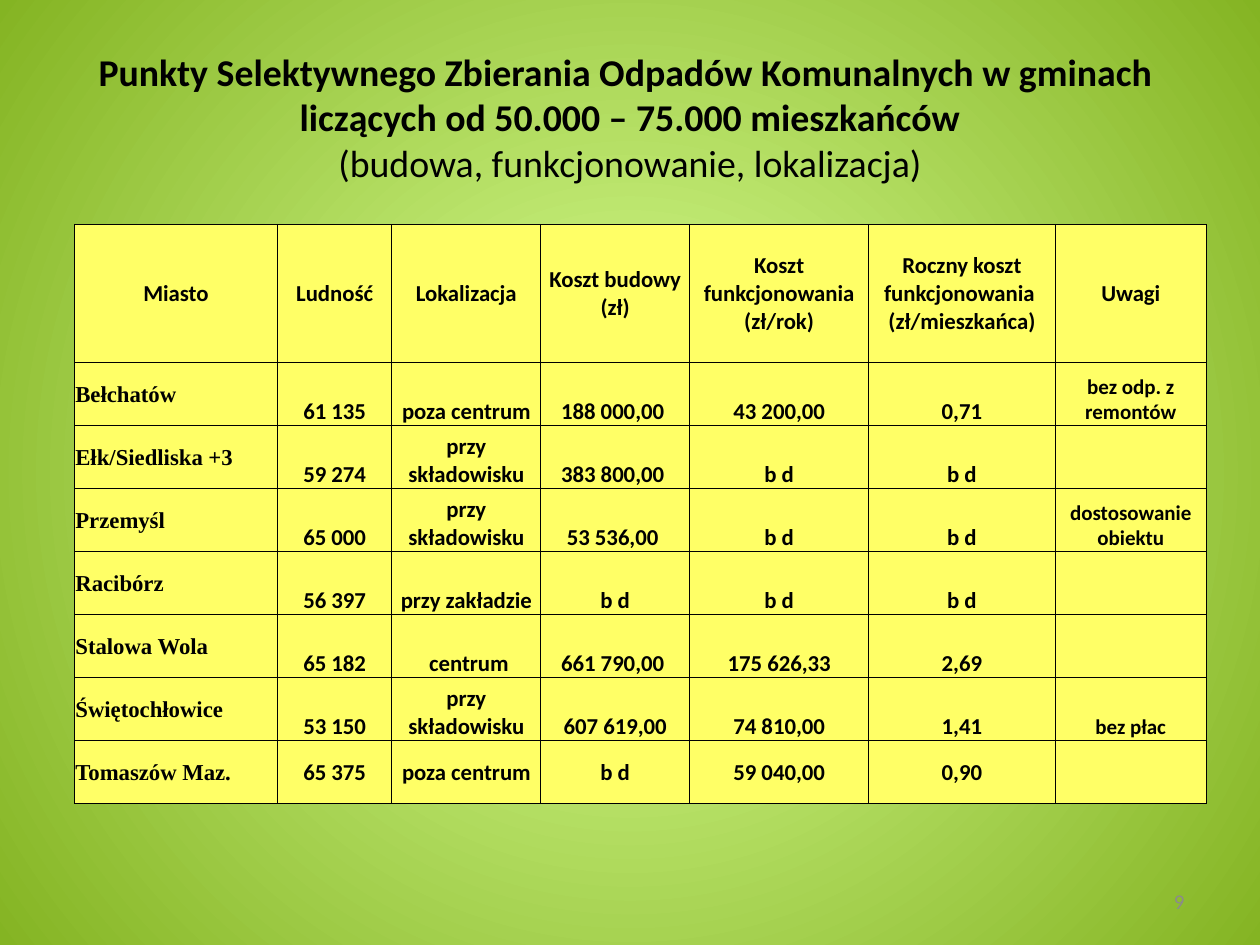
from pptx import Presentation
from pptx import util as u
from pptx.dml.color import RGBColor
from pptx.enum import text as t
from pptx.oxml import ns, parse_xml

HUES = {"ink": "000000", "cell": "FFFF66", "glow": "D9FF95", "edge": "84B423", "page": "8B8B8B"}
MID, LOW = t.MSO_ANCHOR.MIDDLE, t.MSO_ANCHOR.BOTTOM
LEFT, CENTER, RIGHT = t.PP_ALIGN.LEFT, t.PP_ALIGN.CENTER, t.PP_ALIGN.RIGHT

COLS = [4.09, 2.31, 3, 3, 3.61, 3.76, 3.05]
ROWS = [2.79] + [1.27] * 7
HEAD = ["Miasto", "Ludność", "Lokalizacja", "Koszt budowy\n(zł)",
        "Koszt funkcjonowania\n(zł/rok)",
        "Roczny koszt funkcjonowania  (zł/mieszkańca)", "Uwagi"]
TOWNS = [
    ["Bełchatów", "61 135", "poza centrum", "188 000,00 ", "43 200,00", "0,71", "bez odp. z remontów"],
    ["Ełk/Siedliska +3", "59 274", "przy składowisku", "383 800,00 ", "b d", "b d", ""],
    ["Przemyśl", "65 000", "przy składowisku", "53 536,00 ", "b d", "b d", "dostosowanie obiektu"],
    ["Racibórz", "56 397", "przy zakładzie", "b d", "b d", "b d", ""],
    ["Stalowa Wola", "65 182", " centrum", "661 790,00 ", "175 626,33", "2,69", ""],
    ["Świętochłowice", "53 150", "przy składowisku", "607 619,00", "74 810,00", "1,41", "bez płac"],
    ["Tomaszów Maz.", "65 375", "poza centrum", "b d", "59 040,00", "0,90", ""],
]


def tint(name):
    return RGBColor.from_string(HUES[name])


def write(para, words, size=13, face="Calibri", bold=True, hue="ink", align=CENTER):
    para.alignment = align
    run = para.add_run()
    run.text = words
    font = run.font
    font.size, font.name, font.bold = u.Pt(size), face, bold
    font.color.rgb = tint(hue)


class Deck:
    def __init__(self):
        self.file = Presentation()
        self.file.slide_width, self.file.slide_height = u.Cm(25.4), u.Cm(19.05)
        self.slide = self.file.slides.add_slide(self.file.slide_layouts[5])

    def back(self):
        fill = self.slide.background.fill
        fill.gradient()
        for stop, name in zip(fill.gradient_stops, ("glow", "edge")):
            stop.color.rgb = tint(name)
        grad = self.slide.element.find(".//" + ns.qn("a:gradFill"))
        grad.replace(grad.find(ns.qn("a:lin")), parse_xml(
            f'<a:path {ns.nsdecls("a")} path="circle">'
            '<a:fillToRect l="50000" t="50000" r="50000" b="50000"/></a:path>'))

    def title(self, main, sub):
        box = self.slide.shapes.title
        box.left, box.top, box.width, box.height = map(u.Cm, (1.27, 0.76, 22.86, 3.18))
        frame = box.text_frame
        frame.vertical_anchor = MID
        para = frame.paragraphs[0]
        write(para, main, size=21.6)
        para.add_line_break()
        write(para, sub, size=21.6, bold=False)

    def cell(self, cell, words, anchor, **style):
        cell.margin_left = cell.margin_right = cell.margin_top = u.Cm(0.02)
        cell.margin_bottom = 0
        cell.vertical_anchor = anchor
        props = cell._tc.get_or_add_tcPr()
        for side in "LRTB":
            props.append(parse_xml(
                f'<a:ln{side} {ns.nsdecls("a")} w="{u.Pt(0.5)}"><a:solidFill>'
                f'<a:srgbClr val="{HUES["ink"]}"/></a:solidFill></a:ln{side}>'))
        cell.fill.solid()
        cell.fill.fore_color.rgb = tint("cell")
        frame = cell.text_frame
        for i, line in enumerate(words.split("\n") if words else []):
            write(frame.add_paragraph() if i else frame.paragraphs[0], line, **style)

    def table(self, left, top):
        grid = self.slide.shapes.add_table(
            len(ROWS), len(COLS), u.Cm(left), u.Cm(top), u.Cm(sum(COLS)), u.Cm(sum(ROWS))).table
        grid.first_row = grid.horz_banding = False
        for col, width in zip(grid.columns, COLS):
            col.width = u.Cm(width)
        for row, height in zip(grid.rows, ROWS):
            row.height = u.Cm(height)
        last = len(TOWNS)
        for r, line in enumerate([HEAD] + TOWNS):
            for c, words in enumerate(line):
                style = {}
                if r and c == 0:
                    style = {"face": "Times New Roman", "align": LEFT}
                elif r and c == len(COLS) - 1:
                    style = {"size": 12}
                anchor = MID if c == 0 or r in (0, last) else LOW
                self.cell(grid.cell(r, c), words, anchor, **style)

    def page(self, words):
        box = self.slide.shapes.add_textbox(*map(u.Cm, (18.2, 17.66, 5.93, 1.01)))
        frame = box.text_frame
        frame.word_wrap = True
        frame.vertical_anchor = MID
        write(frame.paragraphs[0], words, size=12, bold=False, hue="page", align=RIGHT)


def main():
    deck = Deck()
    deck.back()
    deck.title("Punkty Selektywnego Zbierania Odpadów Komunalnych w gminach  "
               "liczących od 50.000 – 75.000 mieszkańców",
               "(budowa, funkcjonowanie, lokalizacja)")
    deck.table(1.5, 4.52)
    deck.page("9")
    deck.file.save("out.pptx")


if __name__ == "__main__":
    main()
